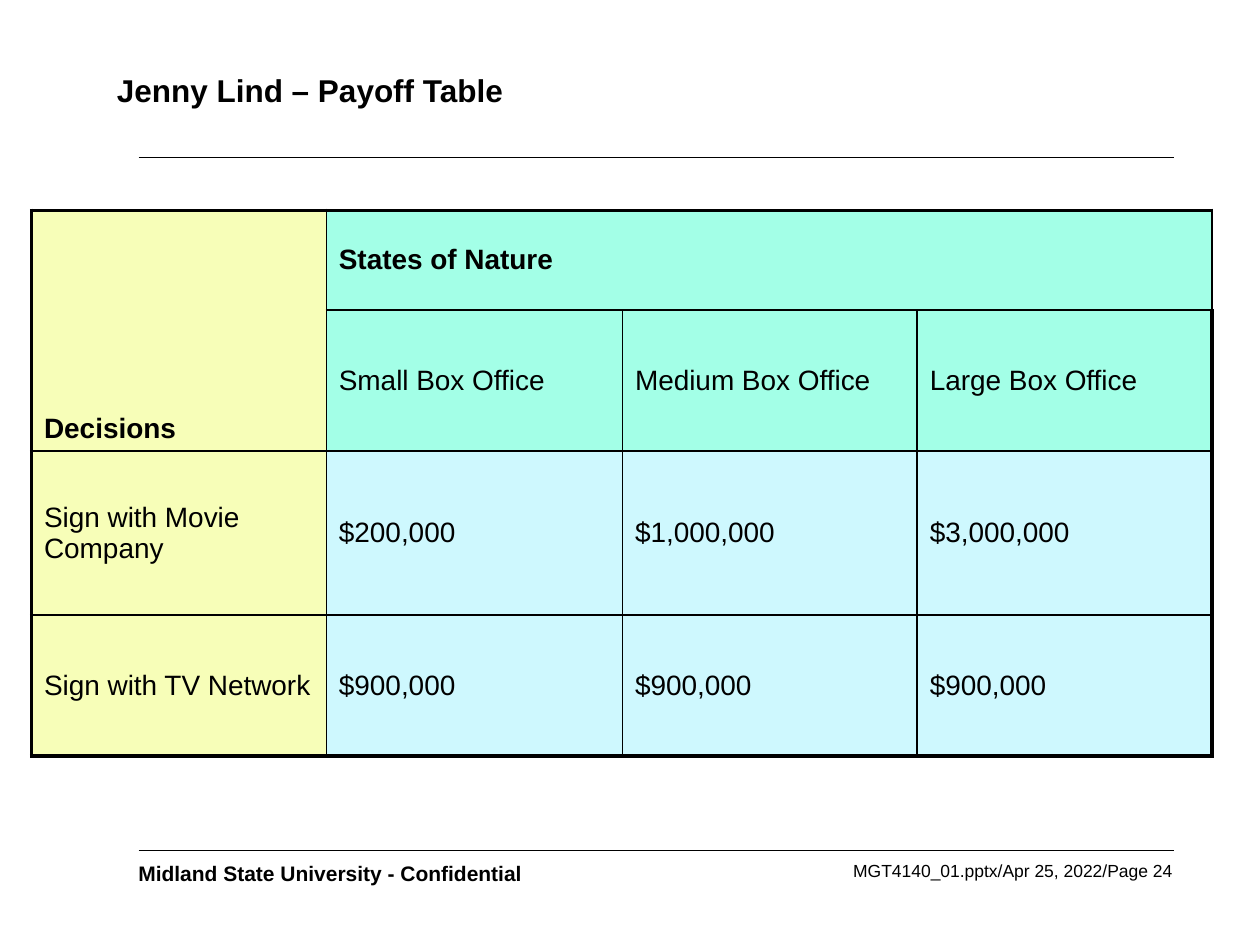
from lxml import etree
from pptx import Presentation, util as u
from pptx.dml.color import RGBColor
from pptx.enum import shapes, text
from pptx.oxml import ns

COLORS = {"ink": "000000", "decision": "F7FEB8", "state": "A3FFE7", "payoff": "CEF8FE"}
TITLE = "Jenny Lind – Payoff Table"
OWNER = "Midland State University - Confidential"
PAGE = "MGT4140_01.pptx/Apr 25, 2022/Page 24"
PAYOFFS = [
    ["Decisions", "States of Nature", "", ""],
    ["", "Small Box Office", "Medium Box Office", "Large Box Office"],
    ["Sign with Movie Company", "$200,000", "$1,000,000", "$3,000,000"],
    ["Sign with TV Network", "$900,000", "$900,000", "$900,000"],
]
HEADINGS = ("Decisions", "States of Nature")
COLUMN_WIDTHS = [2.34, 2.35, 2.34, 2.34]
ROW_HEIGHTS = [0.79, 1.12, 1.3, 1.12]
RULE_HEIGHTS = [1.25, 6.75]
THIN, THICK = 1, 2.25


def color(name):
    return RGBColor.from_string(COLORS[name])


def write(frame, words, size=16, bold=False, align=text.PP_ALIGN.LEFT, before=0):
    paragraph = frame.paragraphs[0]
    paragraph.alignment = align
    paragraph.space_before = u.Pt(before)
    run = paragraph.add_run()
    run.text = words
    run.font.name, run.font.size, run.font.bold = "Arial", u.Pt(size), bold
    run.font.color.rgb = color("ink")


def add_words(slide, box, words, anchor=text.MSO_ANCHOR.TOP, **style):
    frame = slide.shapes.add_textbox(*map(u.Inches, box)).text_frame
    frame.word_wrap = True
    frame.vertical_anchor = anchor
    write(frame, words, **style)


def add_rule(slide, y):
    rule = slide.shapes.add_connector(
        shapes.MSO_CONNECTOR.STRAIGHT, *map(u.Inches, (1.1, y, 9.32, y)))
    rule.line.color.rgb = color("ink")
    rule.line.width = u.Pt(THIN)
    etree.SubElement(rule._element.spPr, ns.qn("a:effectLst"))


def set_borders(cell, row, column):
    outer = {"L": column == 0, "R": column == len(COLUMN_WIDTHS) - 1,
             "T": row == 0, "B": row == len(ROW_HEIGHTS) - 1}
    properties = cell._tc.get_or_add_tcPr()
    for side, is_outer in outer.items():
        width = u.Pt(THICK if is_outer else THIN)
        border = etree.SubElement(properties, ns.qn(f"a:ln{side}"), w=str(int(width)))
        paint = etree.SubElement(border, ns.qn("a:solidFill"))
        etree.SubElement(paint, ns.qn("a:srgbClr"), val=COLORS["ink"])


def add_payoffs(slide):
    box = (0.25, 1.67, sum(COLUMN_WIDTHS), sum(ROW_HEIGHTS))
    table = slide.shapes.add_table(
        len(ROW_HEIGHTS), len(COLUMN_WIDTHS), *map(u.Inches, box)).table
    table.first_row = table.horz_banding = False
    for column, width in zip(table.columns, COLUMN_WIDTHS):
        column.width = u.Inches(width)
    for row, height in zip(table.rows, ROW_HEIGHTS):
        row.height = u.Inches(height)
    for r, entries in enumerate(PAYOFFS):
        for c, words in enumerate(entries):
            cell = table.cell(r, c)
            set_borders(cell, r, c)
            cell.fill.solid()
            cell.fill.fore_color.rgb = color(
                "decision" if c == 0 else "state" if r < 2 else "payoff")
            cell.vertical_anchor = (
                text.MSO_ANCHOR.BOTTOM if words == "Decisions" else text.MSO_ANCHOR.MIDDLE)
            if words:
                write(cell.text_frame, words, bold=words in HEADINGS, before=3.2)
    table.cell(0, 0).merge(table.cell(1, 0))
    table.cell(0, 1).merge(table.cell(0, 3))


def main():
    deck = Presentation()
    deck.slide_width, deck.slide_height = u.Inches(10), u.Inches(7.5)
    slide = deck.slides.add_slide(deck.slide_layouts[6])
    add_words(slide, (5.58, 6.78, 3.82, 0.26), PAGE, size=10, align=text.PP_ALIGN.RIGHT)
    add_words(slide, (1, 6.78, 3.84, 0.3), OWNER, size=12, bold=True)
    for y in RULE_HEIGHTS:
        add_rule(slide, y)
    add_words(slide, (0.83, 0.25, 8.5, 0.92), TITLE, size=18, bold=True,
              anchor=text.MSO_ANCHOR.MIDDLE)
    add_payoffs(slide)
    deck.save("out.pptx")


if __name__ == "__main__":
    main()
